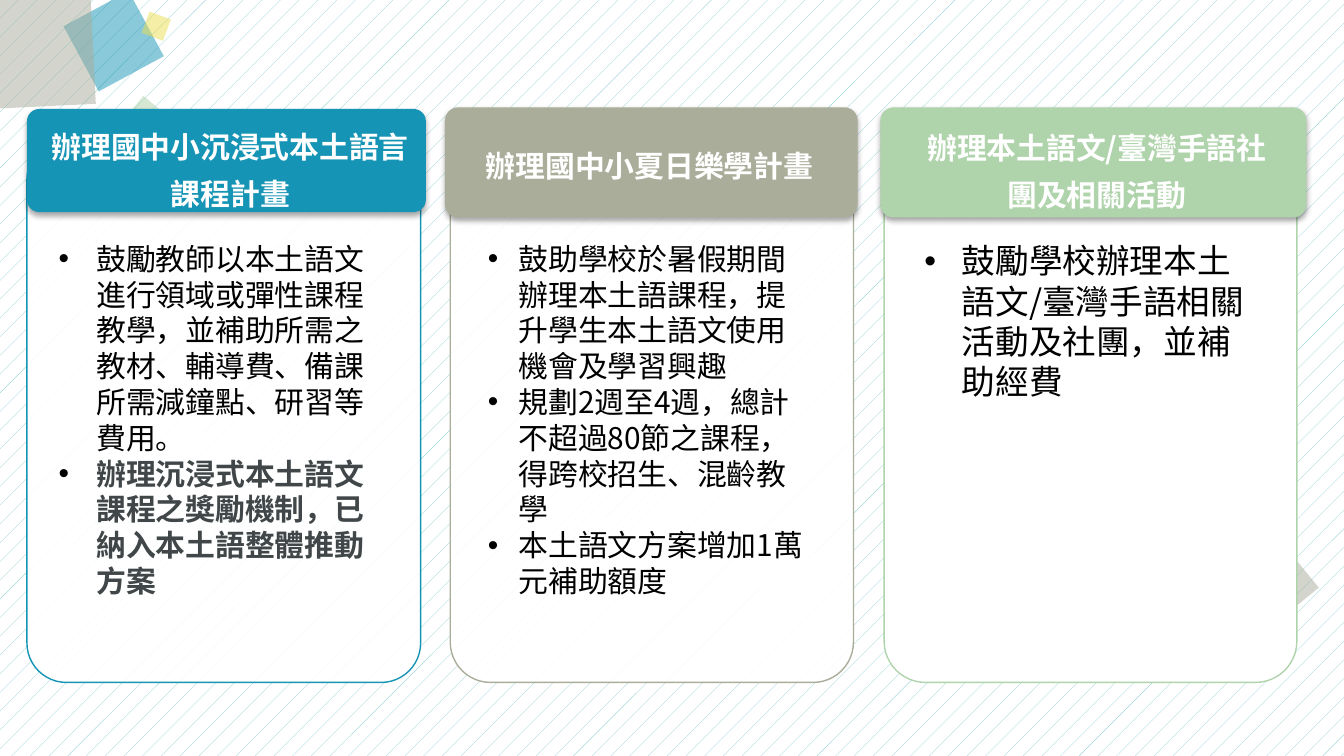
from dataclasses import dataclass

from lxml import etree
from pptx import Presentation
from pptx import util as u
from pptx.dml.color import RGBColor
from pptx.enum import dml, shapes, text
from pptx.oxml import ns

COLORS = {
    "teal": "1594B5", "stone": "A9AD9A", "green": "AFD3AB", "yellow": "EBDE4F",
    "stripe": "8ACBD1", "white": "FFFFFF", "black": "000000", "dark": "414749",
}
FONT = "Noto Sans CJK SC"
CARD_TOP, CARD_HEIGHT = 2.64, 10.26
BODY_OFFSET = 1.78


@dataclass
class Column:
    color: str
    card: tuple
    header: tuple
    heading: tuple
    body: tuple
    title: str
    points: list
    size: int = 16
    indent: float = 0.71
    opacity: int = 90


COLUMNS = [
    Column("teal", (0.51, 7.44), (0, -0.58, 7.54, 1.95), (0.15, -0.53, 7.39, 2.03),
           (0.35, 6.71, 7.09), "辦理國中小沉浸式本土語言課程計畫",
           [("鼓勵教師以本土語文進行領域或彈性課程教學，並補助所需之教材、輔導費、備課所需減鐘點、研習等費用。", False),
            ("辦理沉浸式本土語文課程之獎勵機制，已納入本土語整體推動方案", True)]),
    Column("stone", (8.51, 7.62), (-0.1, -0.61, 7.8, 2.08), (0.05, -0.18, 7.44, 1.14),
           (0.46, 6.68, 7.09), "辦理國中小夏日樂學計畫",
           [("鼓助學校於暑假期間辦理本土語課程，提升學生本土語文使用機會及學習興趣", False),
            ("規劃2週至4週，總計不超過80節之課程，得跨校招生、混齡教學", False),
            ("本土語文方案增加1萬元補助額度", False)], indent=0.58),
    Column("green", (16.71, 7.8), (-0.07, -0.61, 8.05, 2.08), (0.31, -0.51, 7.42, 2.03),
           (0.51, 6.78, 3.33), "辦理本土語文/臺灣手語社團及相關活動",
           [("鼓勵學校辦理本土語文/臺灣手語相關活動及社團，並補助經費", False)],
           size=18, opacity=100),
]
DECORATIONS = [
    (23.83, 10.59, 0.91, 320.6, "stone"),
    (1.45, 0.08, 1.4, 331.6, "teal"),
    (-0.89, -0.61, 2.64, 357.2, "stone"),
    (2.46, 1.93, 0.58, 309.8, "green"),
    (2.74, 0.28, 0.43, 290.5, "yellow"),
]


def rgb(name):
    return RGBColor.from_string(COLORS[name])


def add_block(slide, kind, box, color, opacity=100, line=None):
    shape = slide.shapes.add_shape(kind, *map(u.Cm, box))
    shape.shadow.inherit = False
    shape.fill.solid()
    shape.fill.fore_color.rgb = rgb(color)
    if opacity < 100:
        fill_color = shape.fill._xPr.find(".//" + ns.qn("a:srgbClr"))
        etree.SubElement(fill_color, ns.qn("a:alpha"), val=str(opacity * 1000))
    if line:
        shape.line.color.rgb = rgb(line)
        shape.line.width = u.Pt(0.75)
    else:
        shape.line.fill.background()
    return shape


def add_shadow(shape):
    effects = shape._element.spPr.find(ns.qn("a:effectLst"))
    shadow = etree.SubElement(
        effects, ns.qn("a:outerShdw"), blurRad=str(u.Pt(3.1)),
        dist=str(u.Pt(1.8)), dir="5400000", rotWithShape="0")
    color = etree.SubElement(shadow, ns.qn("a:srgbClr"), val=COLORS["black"])
    etree.SubElement(color, ns.qn("a:alpha"), val="35000")


def add_text_frame(slide, box):
    frame = slide.shapes.add_textbox(*map(u.Cm, box)).text_frame
    frame.word_wrap = True
    return frame


def write(paragraph, content, size, color, bold):
    paragraph.text = content
    font = paragraph.runs[0].font
    font.name, font.size, font.bold = FONT, u.Pt(size), bold
    font.color.rgb = rgb(color)
    etree.SubElement(font._element, ns.qn("a:ea"), typeface=FONT)


def add_bullet(paragraph, indent):
    properties = paragraph._p.get_or_add_pPr()
    properties.set("marL", str(u.Cm(indent)))
    properties.set("indent", str(-u.Cm(indent)))
    color = etree.SubElement(properties, ns.qn("a:buClr"))
    etree.SubElement(color, ns.qn("a:srgbClr"), val=COLORS["black"])
    etree.SubElement(properties, ns.qn("a:buFont"), typeface="Arial")
    etree.SubElement(properties, ns.qn("a:buChar"), char="•")


def add_column(slide, column, box):
    left, top, width, height = box
    rounded = shapes.MSO_SHAPE.ROUNDED_RECTANGLE

    def inside(x, y, w, h):
        return left + x, top + y, w, h

    card = add_block(slide, rounded, box, "white", column.opacity, column.color)
    card.adjustments[0] = 0.1
    header = add_block(slide, rounded, inside(*column.header), column.color)
    header.adjustments[0] = 0.12
    add_shadow(header)

    heading = add_text_frame(slide, inside(*column.heading)).paragraphs[0]
    write(heading, column.title, 16, "white", True)
    heading.alignment = text.PP_ALIGN.CENTER
    heading.line_spacing = 1.3

    x, w, h = column.body
    frame = add_text_frame(slide, inside(x, BODY_OFFSET, w, h))
    for index, (point, strong) in enumerate(column.points):
        paragraph = frame.add_paragraph() if index else frame.paragraphs[0]
        write(paragraph, point, column.size, "dark" if strong else "black", strong)
        add_bullet(paragraph, column.indent)


def add_backdrop(slide):
    fill = slide.background.fill
    fill.patterned()
    fill.pattern = dml.MSO_PATTERN.PERCENT_5
    fill.fore_color.rgb = rgb("stripe")
    fill.back_color.rgb = rgb("white")
    for left, top, side, rotation, color in DECORATIONS:
        square = add_block(slide, shapes.MSO_SHAPE.RECTANGLE,
                           (left, top, side, side), color, 50)
        square.rotation = rotation


def main():
    presentation = Presentation()
    presentation.slide_width, presentation.slide_height = u.Cm(25.4), u.Cm(14.29)
    slide = presentation.slides.add_slide(presentation.slide_layouts[6])
    add_backdrop(slide)
    for column in COLUMNS:
        left, width = column.card
        add_column(slide, column, (left, CARD_TOP, width, CARD_HEIGHT))
    presentation.save("out.pptx")


if __name__ == "__main__":
    main()
